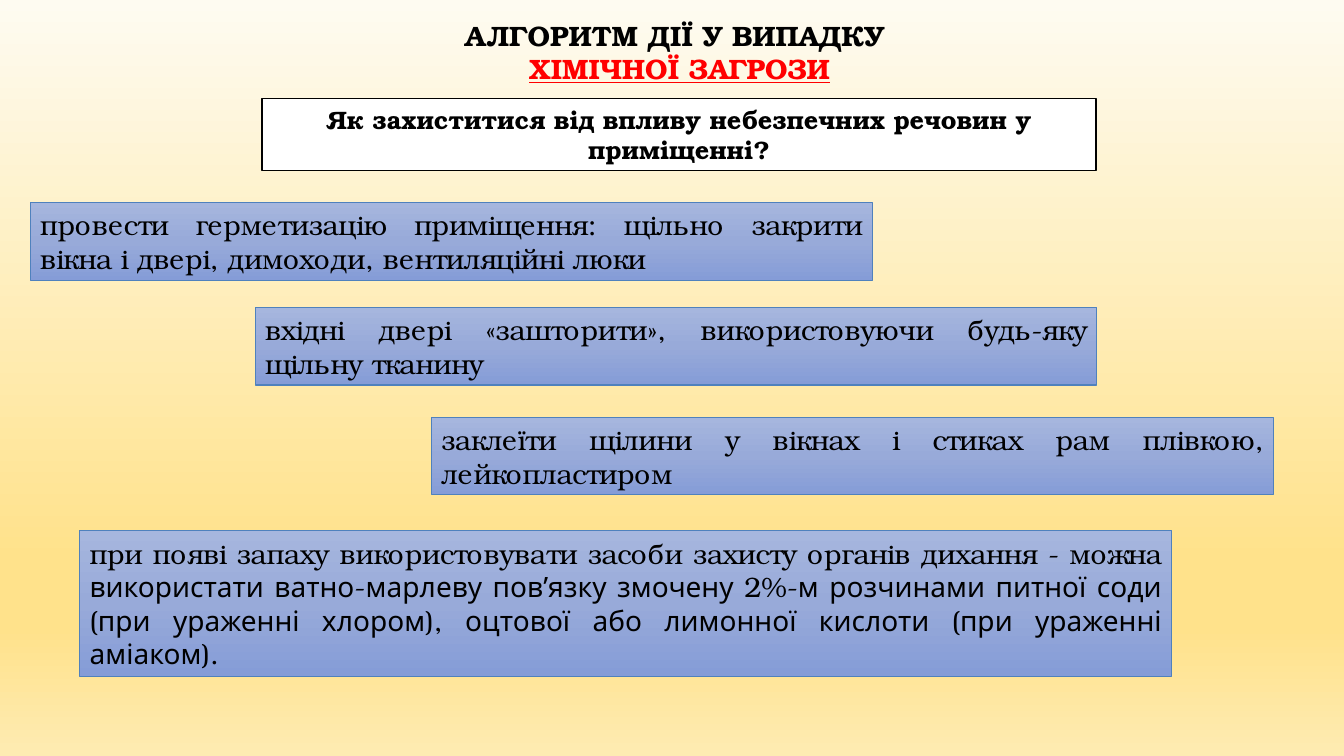
from lxml.etree import SubElement
from pptx import Presentation
from pptx.dml.color import RGBColor
from pptx.enum.shapes import MSO_SHAPE
from pptx.enum.text import MSO_ANCHOR, MSO_AUTO_SIZE, PP_ALIGN
from pptx.oxml.ns import qn
from pptx.util import Inches, Pt

COLORS = {"text": "000000", "danger": "FF0000", "white": "FFFFFF", "edge": "4F81BD"}
PAGE_STOPS = [(0, "FEFBF1"), (74, "FFE28B"), (83, "FFE28B"), (100, "FEEBB2")]
STEP_STOPS = [(0, "A6B6DE"), (50, "98AAD9"), (100, "859CD7")]


def rgb(name):
    return RGBColor.from_string(COLORS[name])


class Deck:
    font = "TeX Gyre Bonum"

    def __init__(self, prs):
        self.s = prs.slides.add_slide(prs.slide_layouts[5])

    def gradient(self, fill, element, stops):
        """Vertical gradient with any number of stops."""
        fill.gradient()
        fill.gradient_angle = 270
        stop_list = element.find(".//" + qn("a:gsLst"))
        for old in list(stop_list):
            stop_list.remove(old)
        for percent, color in stops:
            gs = SubElement(stop_list, qn("a:gs"), pos=str(percent * 1000))
            SubElement(gs, qn("a:srgbClr"), val=color)

    def background(self, stops):
        self.gradient(self.s.background.fill, self.s._element, stops)

    def add_text(self, sp, lines, size, align, bold=False, anchor=MSO_ANCHOR.MIDDLE):
        tf = sp.text_frame
        tf.word_wrap = True
        tf.auto_size = MSO_AUTO_SIZE.SHAPE_TO_FIT_TEXT
        tf.vertical_anchor = anchor
        for i, (text, color, underline) in enumerate(lines):
            p = tf.add_paragraph() if i else tf.paragraphs[0]
            p.alignment = align
            r = p.add_run()
            r.text = text
            r.font.name, r.font.size = self.font, Pt(size)
            r.font.bold, r.font.underline = bold, underline
            r.font.color.rgb = rgb(color)

    def title(self, box, lines):
        sp = self.s.shapes.title
        sp.left, sp.top, sp.width, sp.height = map(Inches, box)
        self.add_text(sp, lines, 20, PP_ALIGN.CENTER, True, MSO_ANCHOR.TOP)

    def panel(self, box, edge, weight):
        sp = self.s.shapes.add_shape(MSO_SHAPE.RECTANGLE, *map(Inches, box))
        sp.shadow.inherit = False
        sp.line.color.rgb = rgb(edge)
        sp.line.width = Pt(weight)
        return sp

    def question(self, box, text):
        sp = self.panel(box, "text", 1)
        sp.fill.solid()
        sp.fill.fore_color.rgb = rgb("white")
        self.add_text(sp, [(text, "text", False)], 18, PP_ALIGN.CENTER, True)

    def step(self, box, text):
        sp = self.panel(box, "edge", 0.75)
        self.gradient(sp.fill, sp._element, STEP_STOPS)
        self.add_text(sp, [(text, "text", False)], 20, PP_ALIGN.JUSTIFY)


def main():
    prs = Presentation()
    prs.slide_width, prs.slide_height = Inches(13.33), Inches(7.5)
    deck = Deck(prs)
    deck.background(PAGE_STOPS)

    # Heading and question
    deck.title((3.12, 0.13, 7.24, 0.77), [
        ("АЛГОРИТМ ДІЇ У ВИПАДКУ ", "text", False),
        ("ХІМІЧНОЇ ЗАГРОЗИ", "danger", True),
    ])
    deck.question((2.6, 0.98, 8.27, 0.71),
                  "Як захиститися від впливу небезпечних речовин у приміщенні?")

    # Staggered two-line steps
    for left, top, text in [
        (0.3, 2.01, "провести герметизацію приміщення: щільно закрити вікна і двері, "
                    "димоходи, вентиляційні люки"),
        (2.53, 3.05, "вхідні двері «зашторити», використовуючи будь-яку щільну тканину"),
        (4.28, 4.14, "заклеїти щілини у вікнах і стиках рам плівкою, лейкопластиром"),
    ]:
        deck.step((left, top, 8.35, 0.77), text)

    # Final wide step
    deck.step((0.79, 5.26, 10.83, 1.45),
              "при появі запаху використовувати засоби захисту органів дихання - можна "
              "використати ватно-марлеву повʼязку змочену 2%-м розчинами питної соди "
              "(при ураженні хлором), оцтової або лимонної кислоти (при ураженні аміаком).")
    prs.save("out.pptx")


if __name__ == "__main__":
    main()
